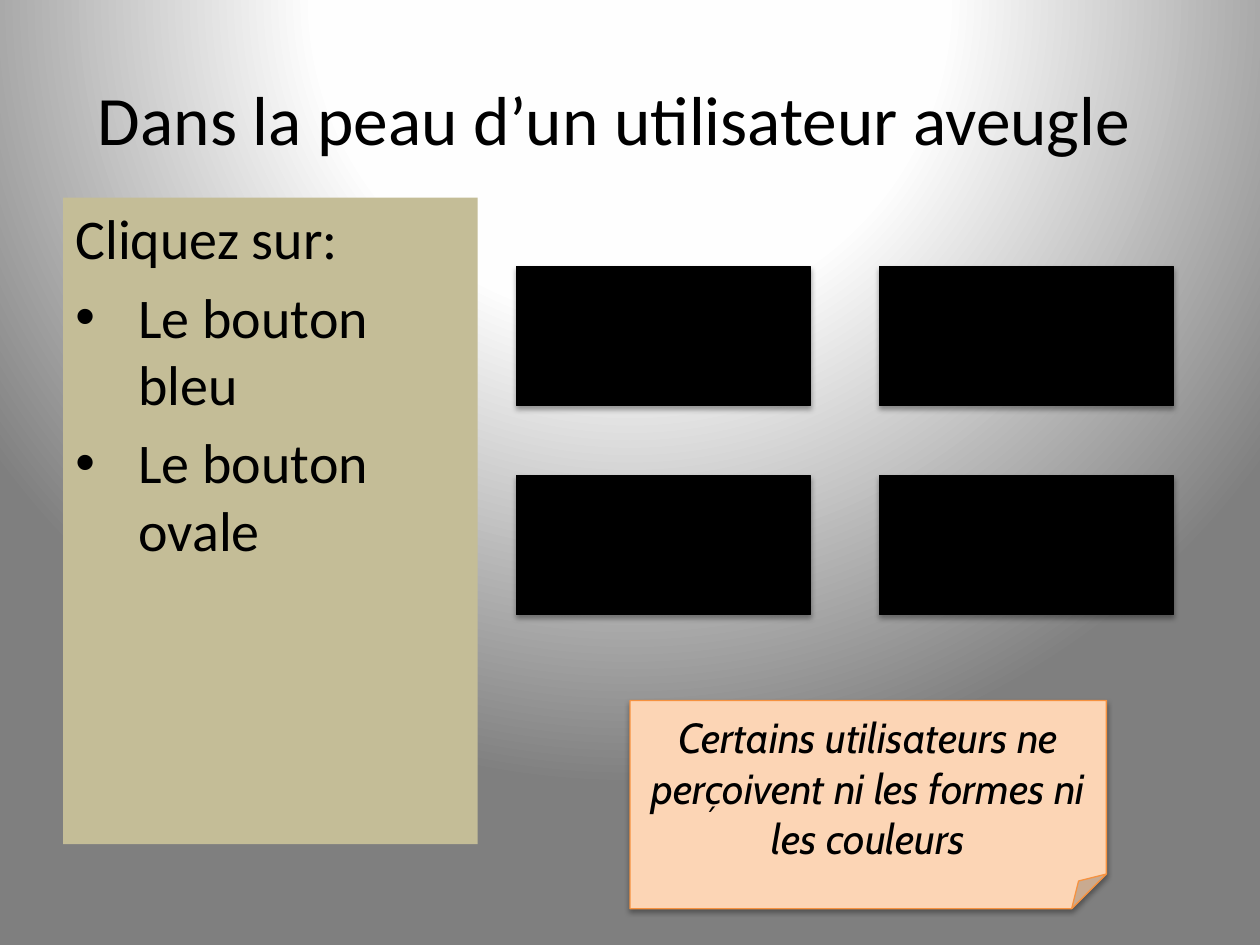
from pptx import Presentation
from pptx.dml.color import RGBColor
from pptx.enum.shapes import MSO_SHAPE
from pptx.enum.text import MSO_ANCHOR, PP_ALIGN
from pptx.oxml import parse_xml
from pptx.oxml.ns import nsdecls
from pptx.util import Pt

RECT, NOTE = MSO_SHAPE.RECTANGLE, MSO_SHAPE.FOLDED_CORNER
TOP, MIDDLE = MSO_ANCHOR.TOP, MSO_ANCHOR.MIDDLE
LEFT, CENTER = PP_ALIGN.LEFT, PP_ALIGN.CENTER

COLORS = {
    "black": "000000", "panel": "C4BD97", "note": "FCD5B5",
    "note_line": "F69240", "white": "FFFFFF", "light": "FEFEFE", "gray": "7F7F7F",
}


class SlideBuilder:
    font = "Calibri"
    indent = 36

    def __init__(self, prs):
        self.s = prs.slides.add_slide(prs.slide_layouts[5])

    def color(self, name):
        return RGBColor.from_string(COLORS[name])

    def background(self, stops):
        self.s.background.fill.solid()
        bg = self.s.element.xpath(".//p:bgPr")[0]
        gs = "".join(
            f'<a:gs pos="{pos * 1000}"><a:srgbClr val="{COLORS[name]}"/></a:gs>'
            for pos, name in stops)
        bg.replace(bg[0], parse_xml(
            f'<a:gradFill {nsdecls("a")} rotWithShape="1"><a:gsLst>{gs}</a:gsLst>'
            '<a:path path="circle">'
            '<a:fillToRect l="50000" t="-80000" r="50000" b="180000"/>'
            '</a:path></a:gradFill>'))

    def place(self, sp, box):
        sp.left, sp.top, sp.width, sp.height = map(Pt, box)

    def run(self, p, text, size, font=None, italic=None):
        r = p.add_run()
        r.text = text
        r.font.size = Pt(size)
        r.font.name = font or self.font
        r.font.italic = italic
        r.font.color.rgb = self.color("black")

    def title(self, text, box, size):
        sp = self.s.shapes.title
        self.place(sp, box)
        tf = sp.text_frame
        tf.vertical_anchor = MIDDLE
        p = tf.paragraphs[0]
        p.alignment = CENTER
        self.run(p, text, size)

    def shape(self, kind, box, fill, line=None, shapes=None):
        shapes = self.s.shapes if shapes is None else shapes
        sp = shapes.add_shape(kind, *map(Pt, box))
        sp.fill.solid()
        sp.fill.fore_color.rgb = self.color(fill)
        sp.shadow.inherit = False
        if line:
            sp.line.color.rgb = self.color(line)
            sp.line.width = Pt(0.75)
            self.shadow(sp)
        else:
            sp.line.fill.background()
        return sp

    def shadow(self, sp):
        sp.element.xpath("./p:spPr/a:effectLst")[0].append(parse_xml(
            f'<a:outerShdw {nsdecls("a")} blurRad="{Pt(3.1)}" dist="{Pt(1.8)}" '
            'dir="5400000" rotWithShape="0">'
            f'<a:srgbClr val="{COLORS["black"]}"><a:alpha val="35000"/></a:srgbClr>'
            '</a:outerShdw>'))

    def button_grid(self, left, top, width, height, step_x, step_y):
        group = self.s.shapes.add_group_shape()
        for row in range(2):
            for col in range(2):
                box = (left + col * step_x, top + row * step_y, width, height)
                self.shape(RECT, box, "black", "black", group.shapes)

    def bullet(self, p):
        pPr = p._p.get_or_add_pPr()
        pPr.set("marL", str(Pt(self.indent)))
        pPr.set("indent", str(-Pt(self.indent)))
        pPr.append(parse_xml(f'<a:buFont {nsdecls("a")} typeface="Arial"/>'))
        pPr.append(parse_xml(f'<a:buChar {nsdecls("a")} char="•"/>'))

    def panel(self, heading, items, box, size):
        tf = self.shape(RECT, box, "panel").text_frame
        tf.word_wrap = True
        tf.vertical_anchor = TOP
        for i, text in enumerate([heading, *items]):
            p = tf.add_paragraph() if i else tf.paragraphs[0]
            p.alignment = LEFT
            p.space_before = Pt(size * 0.2)
            if i:
                self.bullet(p)
            self.run(p, text, size)

    def note(self, text, box, size):
        tf = self.shape(NOTE, box, "note", "note_line").text_frame
        tf.word_wrap = True
        tf.vertical_anchor = MIDDLE
        p = tf.paragraphs[0]
        p.alignment = CENTER
        self.run(p, text, size, "Cabin", True)


def main():
    prs = Presentation()
    prs.slide_width, prs.slide_height = Pt(720), Pt(540)
    b = SlideBuilder(prs)
    b.background([(0, "white"), (40, "light"), (100, "gray")])
    b.title("Dans la peau d’un utilisateur aveugle", (36, 21.6, 630, 91.4), 39.6)
    b.button_grid(295, 152.4, 168, 79.4, 207.5, 119.5)
    b.panel("Cliquez sur:", ["Le bouton bleu", "Le bouton ovale"],
            (36, 113, 237, 369.4), 32)
    b.note("Certains utilisateurs ne perçoivent ni les formes ni les couleurs",
           (360, 400.3, 272.2, 119), 24)
    prs.save("out.pptx")


if __name__ == "__main__":
    main()
